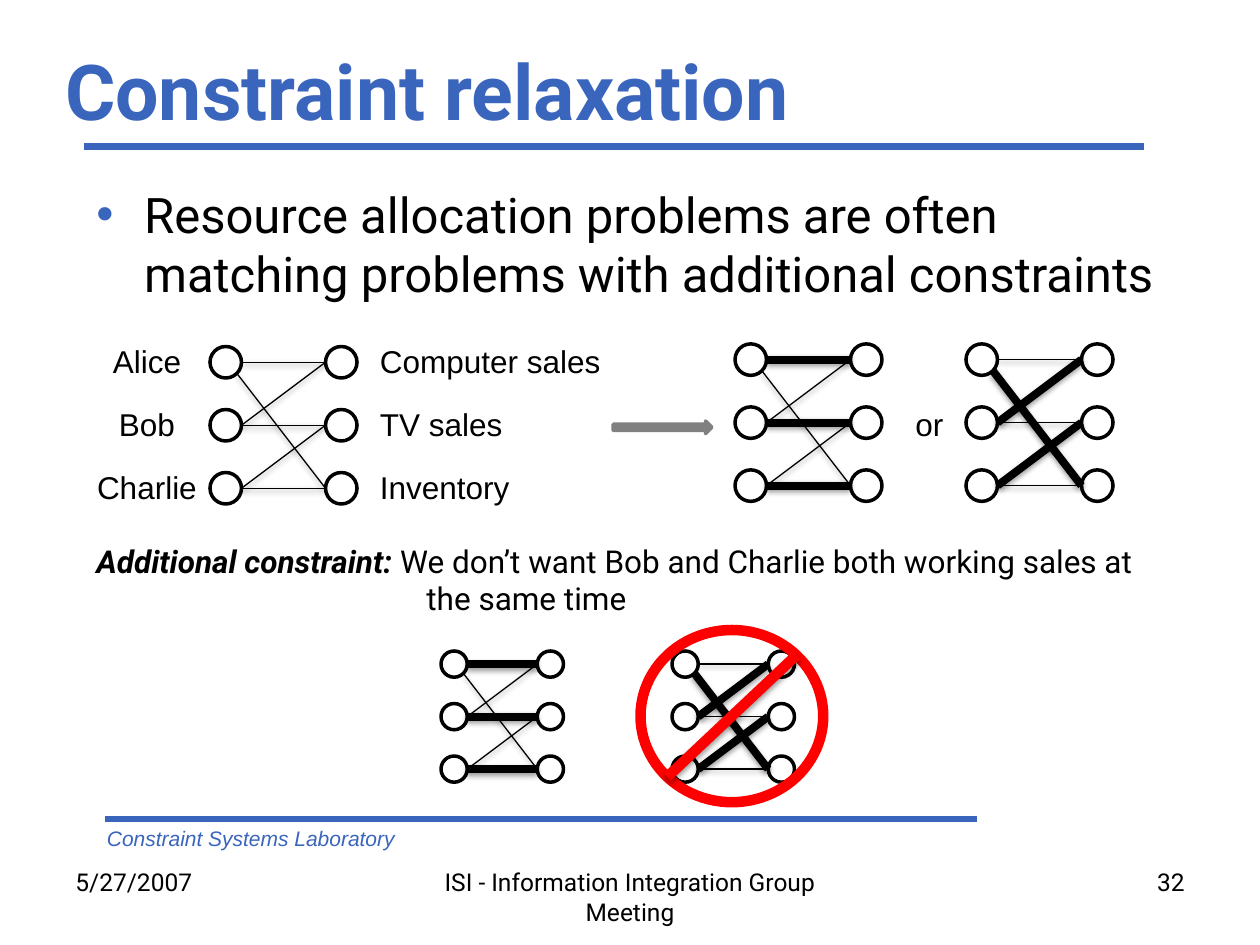
from dataclasses import dataclass
from math import sqrt

from lxml.etree import SubElement
from pptx import Presentation
from pptx.dml.color import RGBColor
from pptx.enum.shapes import MSO_CONNECTOR, MSO_SHAPE
from pptx.enum.text import MSO_ANCHOR, MSO_AUTO_SIZE, PP_ALIGN
from pptx.oxml.ns import qn
from pptx.util import Inches, Pt


@dataclass(frozen=True)
class Theme:
    blue: str = "3A65BC"
    black: str = "000000"
    white: str = "FFFFFF"
    gray: str = "808080"
    red: str = "FF0000"
    sans: str = "Roboto"
    label: str = "Arial"
    head: int = 44
    body: int = 28
    text: int = 18
    foot: int = 14
    small: int = 12
    thin: float = 0.75
    ring: float = 2
    rule: float = 4
    bold: float = 4.5
    ban: float = 6


T = Theme()
COLS, ROWS = 120, 90  # slide grid, 12 cells to the inch
MATCH = [(0, 0), (1, 1), (2, 2)]
CROSS = [(0, 2), (1, 0), (2, 1)]
CUT = (1 - 1 / sqrt(2)) / 2  # where a diagonal meets an ellipse, as share of its box


def cell(n):
    return Inches(10 * n / COLS)


def paint(run, size, font=T.label, color=T.black, bold=False, italic=False):
    run.font.size, run.font.name = Pt(size), font
    run.font.bold, run.font.italic = bold, italic
    run.font.color.rgb = RGBColor.from_string(color)


def write(slide, box, text, size, align=PP_ALIGN.LEFT, wrap=True, **style):
    frame = slide.shapes.add_textbox(*map(cell, box)).text_frame
    frame.word_wrap = wrap
    frame.text = text
    para = frame.paragraphs[0]
    para.alignment = align
    paint(para.runs[0], size, **style)
    return para


def hang(para, width):
    props = para._p.get_or_add_pPr()
    props.set("marL", str(Inches(width)))
    props.set("indent", str(-Inches(width)))
    return props


def line(shapes, start, end, width, color=T.black, shade=True):
    link = shapes.add_connector(MSO_CONNECTOR.STRAIGHT, *map(cell, (*start, *end)))
    link.line.width = Pt(width)
    link.line.color.rgb = RGBColor.from_string(color)
    glow = SubElement(link._element.spPr, qn("a:effectLst"))
    if shade:
        drop = SubElement(glow, qn("a:outerShdw"), blurRad="40000", dist="20000",
                          dir="5400000", rotWithShape="0")
        tint = SubElement(drop, qn("a:srgbClr"), val=T.black)
        SubElement(tint, qn("a:alpha"), val="38000")


def form(shapes, kind, box, fill, edge, width):
    item = shapes.add_shape(kind, *map(cell, box))
    item.shadow.inherit = False
    if fill:
        item.fill.solid()
        item.fill.fore_color.rgb = RGBColor.from_string(fill)
    else:
        item.fill.background()
    item.line.color.rgb = RGBColor.from_string(edge)
    item.line.width = Pt(width)


def graph(slide, left, top, size, heavy=()):
    """Two columns of three nodes; heavy edges are the chosen match."""
    shapes = slide.shapes.add_group_shape().shapes
    far, step, half = left + size * 11 / 3, size * 2, size / 2
    for x in (left, far):
        for row in range(3):
            form(shapes, MSO_SHAPE.OVAL, (x, top + row * step, size, size),
                 T.white, T.black, T.ring)
    for a, b in MATCH + CROSS:
        # The steep edge leaves its node at the lower right
        out, drop = (1 - CUT, 1 - CUT) if b - a == 2 else (1, 0.5)
        line(shapes, (left + out * size, top + a * step + drop * size),
             (far, top + b * step + half), T.bold if (a, b) in heavy else T.thin)


def header(slide, left, top, wide, high):
    title = slide.shapes.title
    title.left, title.top, title.width, title.height = map(cell, (left, top, wide, high))
    frame = title.text_frame
    frame.text = "Constraint relaxation"
    frame.vertical_anchor = MSO_ANCHOR.MIDDLE
    frame.auto_size = MSO_AUTO_SIZE.NONE
    frame.paragraphs[0].alignment = PP_ALIGN.LEFT
    paint(frame.paragraphs[0].runs[0], T.head, T.sans, T.blue, bold=True)
    base = top + high + 1
    line(slide.shapes, (left + 3, base), (left + wide - 4, base), T.rule, T.blue, False)


def point(slide, box):
    para = write(slide, box, "Resource allocation problems are often matching "
                 "problems with additional constraints", T.body, font=T.sans)
    props = hang(para, 0.38)
    tint = SubElement(props, qn("a:buClr"))
    SubElement(tint, qn("a:srgbClr"), val=T.blue)
    SubElement(props, qn("a:buFont"), typeface="Arial")
    SubElement(props, qn("a:buChar"), char="•")


def problem(slide, left, top):
    """Named graph, arrow and its two solutions."""
    names = ["Alice", "Bob", "Charlie"]
    jobs = ["Computer sales", "TV sales", "Inventory"]
    for row, (name, job) in enumerate(zip(names, jobs)):
        y = top + row * 6
        write(slide, (left, y, 12, 4.8), name, T.text, PP_ALIGN.CENTER, wrap=False)
        write(slide, (left + 27, y, 24, 4.8), job, T.text)
    graph(slide, left + 12, top + 1, 3)
    form(slide.shapes, MSO_SHAPE.RIGHT_ARROW, (left + 50.4, top + 8.1, 9.4, 1.2),
         T.gray, T.gray, T.ring)
    graph(slide, left + 62, top + 0.75, 3, MATCH)
    write(slide, (left + 78, top + 6, 5.2, 4.8), "or", T.text, wrap=False)
    graph(slide, left + 84, top + 0.75, 3, CROSS)


def limit(slide, left, top, wide):
    """Extra constraint, the allowed match and the banned one."""
    para = write(slide, (left, top, wide, 8.4), "Additional constraint: ", T.text,
                 font=T.sans, bold=True, italic=True)
    rest = para.add_run()
    rest.text = "We don’t want Bob and Charlie both working sales at the same time"
    paint(rest, T.text, T.sans)
    hang(para, 2.62)
    graph(slide, left + 34, top + 11, 2.5, MATCH)
    graph(slide, left + 56, top + 11, 2.5, CROSS)
    x, y, w, h = left + 53, top + 9, 17.4, 16.4
    form(slide.shapes, MSO_SHAPE.OVAL, (x, y, w, h), None, T.red, T.ban)
    line(slide.shapes, (x + w * CUT, y + h * (1 - CUT)),
         (x + w * (1 - CUT), y + h * CUT), T.ban, T.red)


def footer(slide, left, top, wide):
    line(slide.shapes, (left + 4, top), (left + 87, top), T.rule, T.blue, False)
    write(slide, (left + 3, top, 63, 3.6), "Constraint Systems Laboratory", T.small,
          color=T.blue, italic=True)
    parts = [
        (left, 28, "5/27/2007", PP_ALIGN.LEFT),
        (left + (wide - 38) / 2, 38, "ISI - Information Integration Group Meeting",
         PP_ALIGN.CENTER),
        (left + wide - 28, 28, "32", PP_ALIGN.RIGHT),
    ]
    for x, w, text, align in parts:
        write(slide, (x, top + 4, w, 6.25), text, T.foot, align, font=T.sans)


def main():
    deck = Presentation()
    deck.slide_width, deck.slide_height = cell(COLS), cell(ROWS)
    slide = deck.slides.add_slide(deck.slide_layouts[5])
    header(slide, 5, 4, 108, 9)
    point(slide, (8, 17, 107, 13.5))
    problem(slide, 8, 32)
    limit(slide, 8, 51, 102)
    footer(slide, 6, 78, 108)
    deck.save("out.pptx")


if __name__ == "__main__":
    main()
